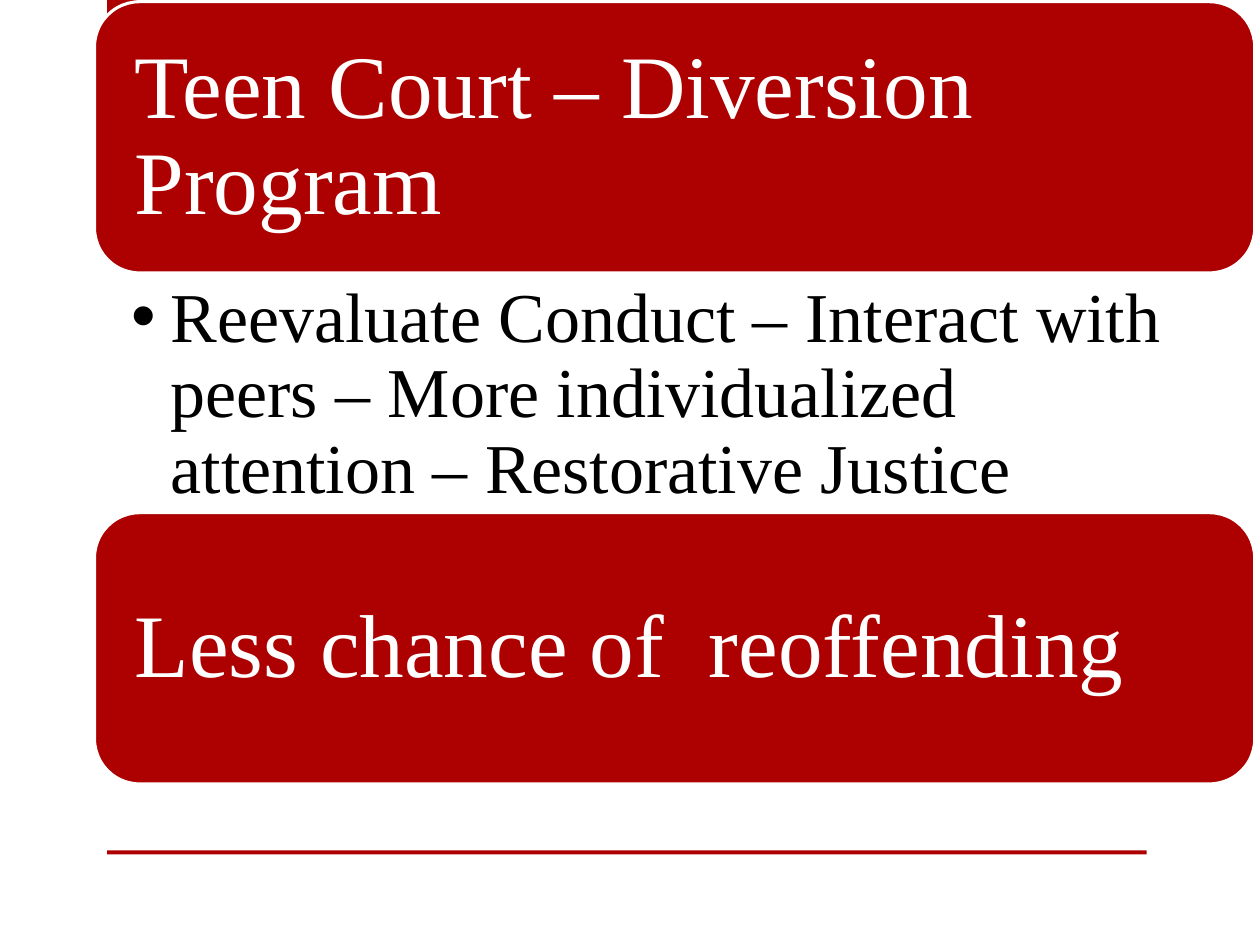
from dataclasses import dataclass

from lxml import etree
from pptx import Presentation
from pptx.dml.color import RGBColor
from pptx.enum.shapes import MSO_SHAPE
from pptx.enum.text import MSO_ANCHOR, MSO_AUTO_SIZE, PP_ALIGN
from pptx.oxml.ns import qn
from pptx.util import Pt

RECTANGLE = MSO_SHAPE.RECTANGLE
ROUNDED = MSO_SHAPE.ROUNDED_RECTANGLE
TOP, MIDDLE = MSO_ANCHOR.TOP, MSO_ANCHOR.MIDDLE
LEFT = PP_ALIGN.LEFT
NO_FIT = MSO_AUTO_SIZE.NONE


@dataclass(frozen=True)
class Theme:
    """Colours, font and type sizes of the slide."""
    red: RGBColor = RGBColor(0xAD, 0x01, 0x01)
    white: RGBColor = RGBColor(0xFF, 0xFF, 0xFF)
    black: RGBColor = RGBColor(0, 0, 0)
    font: str = "Times New Roman"
    heading: float = 51
    body: float = 40


def write_text(box, text, *, font, size, color, margins, anchor=TOP, after=0):
    """Write one left-aligned paragraph into a box and return it."""
    frame = box.text_frame
    frame.word_wrap = True
    frame.auto_size = NO_FIT
    frame.vertical_anchor = anchor
    frame.margin_left, frame.margin_top, frame.margin_right, frame.margin_bottom = map(Pt, margins)
    para = frame.paragraphs[0]
    para.alignment = LEFT
    para.line_spacing = 0.9
    para.space_before, para.space_after = Pt(0), Pt(after)
    span = para.add_run()
    span.text = text
    span.font.name, span.font.size = font, Pt(size)
    span.font.color.rgb = color
    return para


class SlideBuilder:
    """Holds the theme and the current slide and draws each kind of element."""

    def __init__(self, page, theme):
        """Keep the page and its theme."""
        self.page = page
        self.theme = theme

    def block(self, kind, left, top, width, height, outline=None):
        """Draw a red shape with an optional outline."""
        box = self.page.shapes.add_shape(kind, Pt(left), Pt(top), Pt(width), Pt(height))
        box.shadow.inherit = False
        box.fill.solid()
        box.fill.fore_color.rgb = self.theme.red
        if outline:
            box.line.color.rgb = self.theme.white
            box.line.width = Pt(outline)
        else:
            box.line.fill.background()

    def place(self, box, left, top, width, height):
        """Move a placeholder and bring it to the front."""
        box.left, box.top, box.width, box.height = Pt(left), Pt(top), Pt(width), Pt(height)
        self.page.shapes._spTree.append(box._element)

    def panel(self, text, left, top, width, height, title=None):
        """Draw a rounded panel with its heading, in the title if one is given."""
        self.block(ROUNDED, left, top, width, height, outline=1.75)
        inset = 7.6
        area = (left + inset, top + inset, width - 2 * inset, height - 2 * inset)
        if title is not None:
            self.place(title, *area)
        box = title if title is not None else self.page.shapes.add_textbox(*map(Pt, area))
        write_text(box, text, font=self.theme.font, size=self.theme.heading,
                   color=self.theme.white, margins=(15.3,) * 4, anchor=MIDDLE)

    def bullet(self, box, text, left, top, width, height):
        """Fill the body placeholder with one bulleted paragraph."""
        self.place(box, left, top, width, height)
        para = write_text(box, text, font=self.theme.font, size=self.theme.body,
                          color=self.theme.black, margins=(21, 5, 29, 5), after=8)
        properties = para._p.get_or_add_pPr()
        properties.set("marL", str(Pt(22.5)))
        properties.set("indent", str(Pt(-22.5)))
        etree.SubElement(properties, qn("a:buChar")).set("char", "•")


def main():
    """Build the slide and save it."""
    deck = Presentation()
    deck.slide_width, deck.slide_height = Pt(720), Pt(540)
    page = deck.slides.add_slide(deck.slide_layouts[1])
    title, body = page.placeholders
    builder = SlideBuilder(page, Theme())

    for top, height in ((0, 30), (486, 2.2)):
        builder.block(RECTANGLE, 61.2, top, 594, height)

    left, width, panel_height, body_height = 54, 663, 155, 137
    body_top = 1 + panel_height
    builder.panel("Teen Court – Diversion Program", left, 1, width, panel_height, title=title)
    builder.bullet(body, "Reevaluate Conduct – Interact with peers – More individualized "
                   "attention – Restorative Justice", left, body_top, width, body_height)
    builder.panel("Less chance of  reoffending", left, body_top + body_height, width, panel_height)
    deck.save("out.pptx")


if __name__ == "__main__":
    main()
